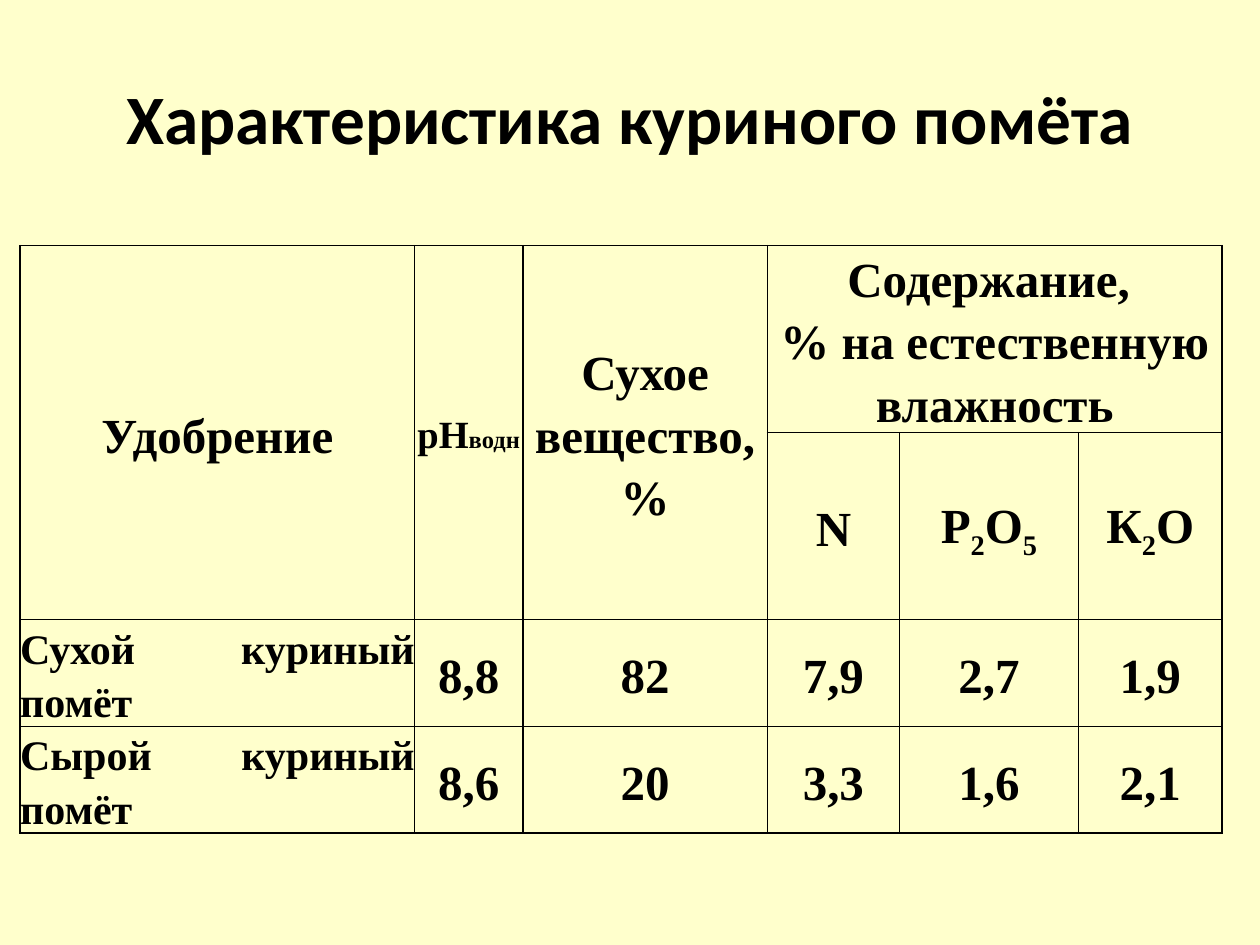
from dataclasses import dataclass

from lxml import etree
from pptx import Presentation
from pptx import util as u
from pptx.dml.color import RGBColor
from pptx.enum import text
from pptx.oxml.ns import qn
from pptx.table import _Cell

COLORS = {"background": "FFFFCC", "ink": "000000"}
TABLE_FONT = "Times New Roman"
COLUMN_WIDTHS = [3.13, 0.86, 1.94, 1.05, 1.42, 1.14]
ROW_HEIGHTS = [1.14, 0.57, 0.57, 0.57]


@dataclass
class Piece:
    wording: str
    size: float = 28
    subscript: bool = False


@dataclass
class Entry:
    row: int
    column: int
    lines: list[list[Piece]]
    row_span: int = 1
    column_span: int = 1
    alignment: text.PP_ALIGN = text.PP_ALIGN.CENTER


def plain(*lines: str, size: float = 28) -> list[list[Piece]]:
    return [[Piece(line, size)] for line in lines]


def formula(symbols: str) -> list[list[Piece]]:
    return [[Piece(symbol, subscript=symbol.isdigit()) for symbol in symbols]]


HEADERS = [
    Entry(0, 0, plain("Удобрение"), row_span=2),
    Entry(0, 1, [[Piece("рН", 22), Piece("водн", 14)]], row_span=2),
    Entry(0, 2, plain("Сухое", "вещество, %"), row_span=2),
    Entry(0, 3, plain("Содержание, ", "% на естественную влажность"), column_span=3),
    Entry(1, 3, plain("N")),
    Entry(1, 4, formula("Р2О5")),
    Entry(1, 5, formula("К2О")),
]
MANURES = {
    "Сухой куриный помёт": ["8,8", "82", "7,9", "2,7", "1,9"],
    "Сырой куриный помёт": ["8,6", "20", "3,3", "1,6", "2,1"],
}


def style_cell(cell: _Cell) -> None:
    cell.margin_left = cell.margin_right = cell.margin_top = cell.margin_bottom = 0
    cell.vertical_anchor = text.MSO_ANCHOR.MIDDLE
    properties = cell._tc.get_or_add_tcPr()
    for side in ("lnL", "lnR", "lnT", "lnB"):
        line = etree.SubElement(properties, qn(f"a:{side}"), w=str(u.Pt(1)))
        fill = etree.SubElement(line, qn("a:solidFill"))
        etree.SubElement(fill, qn("a:srgbClr"), val=COLORS["ink"])
    cell.fill.background()


def write_entry(cell: _Cell, entry: Entry) -> None:
    frame = cell.text_frame
    for index, pieces in enumerate(entry.lines):
        paragraph = frame.add_paragraph() if index else frame.paragraphs[0]
        paragraph.alignment = entry.alignment
        paragraph.line_spacing = 1.15
        paragraph.font.name = TABLE_FONT
        paragraph.font.bold = True
        paragraph.font.size = u.Pt(pieces[0].size)
        paragraph.font.color.rgb = RGBColor.from_string(COLORS["ink"])
        for piece in pieces:
            run = paragraph.add_run()
            run.text = piece.wording
            run.font.name = TABLE_FONT
            run.font.bold = True
            run.font.size = u.Pt(piece.size)
            run.font.color.rgb = RGBColor.from_string(COLORS["ink"])
            if piece.subscript:
                run._r.get_or_add_rPr().set("baseline", "-25000")


def add_title(slide) -> None:
    title = slide.shapes.title
    title.left, title.top = u.Inches(0.5), u.Inches(0.3)
    title.width, title.height = u.Inches(9), u.Inches(1.25)
    title.text_frame.text = "Характеристика куриного помёта"
    title.text_frame.vertical_anchor = text.MSO_ANCHOR.MIDDLE
    paragraph = title.text_frame.paragraphs[0]
    paragraph.alignment = text.PP_ALIGN.CENTER
    paragraph.font.name = "Calibri"
    paragraph.font.size = u.Pt(39.6)
    paragraph.font.bold = True
    paragraph.font.color.rgb = RGBColor.from_string(COLORS["ink"])


def add_manure_table(slide) -> None:
    shape = slide.shapes.add_table(
        len(ROW_HEIGHTS), len(COLUMN_WIDTHS),
        u.Inches(0.16), u.Inches(1.95), u.Inches(9.53), u.Inches(3.99),
    )
    table = shape.table
    table.first_row = table.horz_banding = False
    for column, width in zip(table.columns, COLUMN_WIDTHS):
        column.width = u.Inches(width)
    for row, height in zip(table.rows, ROW_HEIGHTS):
        row.height = u.Inches(height)
    shape.height = u.Inches(3.99)
    for cell in table.iter_cells():
        style_cell(cell)

    entries = list(HEADERS)
    for row, (name, values) in enumerate(MANURES.items(), start=2):
        entries.append(Entry(row, 0, plain(name, size=24), alignment=text.PP_ALIGN.JUSTIFY))
        entries += [Entry(row, column, plain(value)) for column, value in enumerate(values, start=1)]
    for entry in entries:
        cell = table.cell(entry.row, entry.column)
        if entry.row_span > 1 or entry.column_span > 1:
            cell.merge(table.cell(entry.row + entry.row_span - 1, entry.column + entry.column_span - 1))
        write_entry(cell, entry)


def main() -> None:
    presentation = Presentation()
    presentation.slide_width, presentation.slide_height = u.Inches(10), u.Inches(7.5)
    slide = presentation.slides.add_slide(presentation.slide_layouts[5])
    slide.background.fill.solid()
    slide.background.fill.fore_color.rgb = RGBColor.from_string(COLORS["background"])
    add_title(slide)
    add_manure_table(slide)
    presentation.save("out.pptx")


if __name__ == "__main__":
    main()
